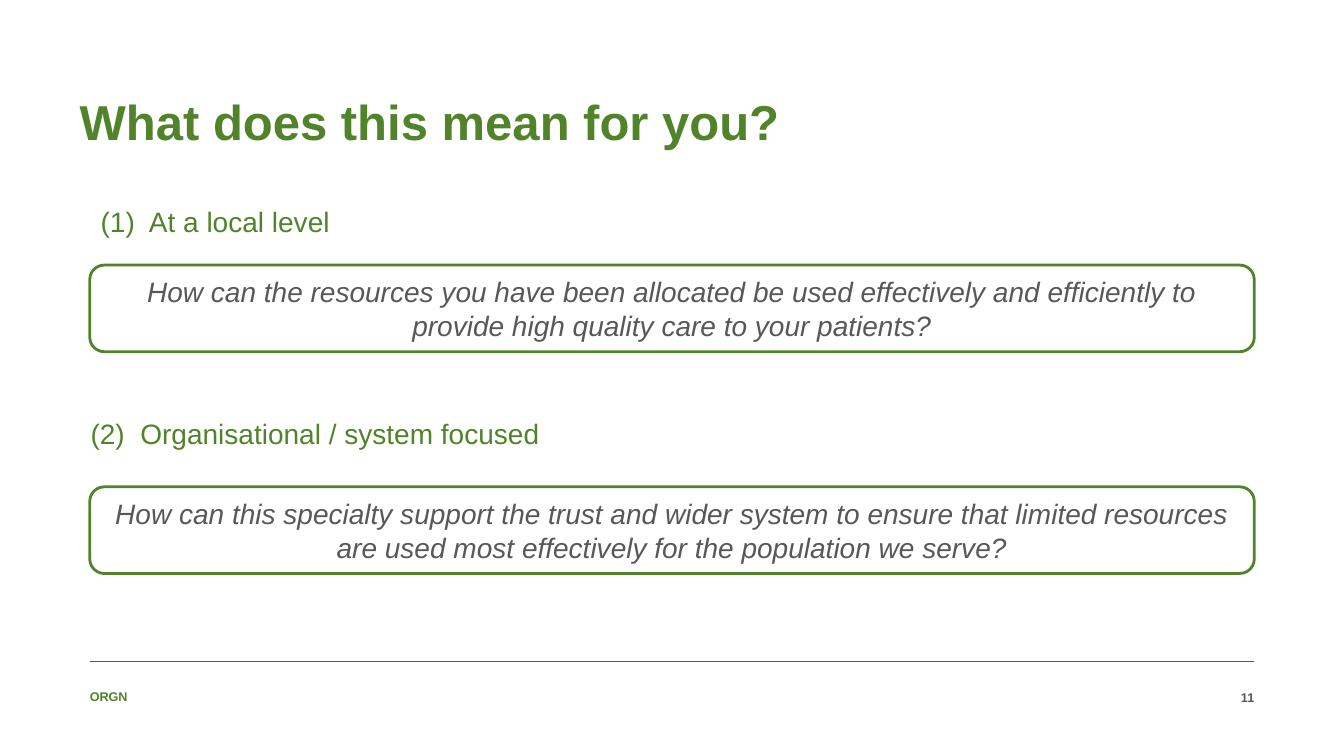
import pptx
import pptx.util
import pptx.dml.color
import pptx.enum.shapes
import pptx.enum.text
import pptx.oxml

RGBColor = pptx.dml.color.RGBColor
GREEN = RGBColor(0x51, 0x83, 0x2B)
GREY = RGBColor(0x59, 0x58, 0x57)
WHITE = RGBColor(0xFF, 0xFF, 0xFF)
ALIGN = pptx.enum.text.PP_ALIGN
ANCHOR = pptx.enum.text.MSO_ANCHOR
SHAPE = pptx.enum.shapes.MSO_SHAPE

LEFT, RIGHT = 89, 1244
WIDTH = RIGHT - LEFT


def px(n):
    """Convert px, at 100 to the inch, into EMU."""
    return pptx.util.Emu(n * 9144)


class SlideBuilder:
    font = "Arial"

    def __init__(self, prs):
        self.s = prs.slides.add_slide(prs.slide_layouts[5])

    def set_text(self, sp, text, size, color, bold=False, italic=False,
                 align=ALIGN.LEFT, anchor=ANCHOR.MIDDLE, inset=0, leading=None):
        tf = sp.text_frame
        tf.text = text
        tf.word_wrap = True
        tf.auto_size = pptx.enum.text.MSO_AUTO_SIZE.NONE
        tf.vertical_anchor = anchor
        tf.margin_left = tf.margin_right = px(inset)
        tf.margin_top = tf.margin_bottom = px(inset // 2)
        p = tf.paragraphs[0]
        p.alignment = align
        if leading:
            p.line_spacing = pptx.util.Pt(leading)
        f = p.runs[0].font
        f.name, f.size, f.color.rgb = self.font, pptx.util.Pt(size), color
        f.bold, f.italic = bold, italic

    def title(self, x, y, w, h, text):
        sp = self.s.shapes.title
        sp.left, sp.top, sp.width, sp.height = map(px, (x, y, w, h))
        self.set_text(sp, text, 35, GREEN, bold=True, anchor=ANCHOR.BOTTOM)

    def text(self, x, y, w, h, text, size, color, **style):
        sp = self.s.shapes.add_textbox(*map(px, (x, y, w, h)))
        self.set_text(sp, text, size, color, **style)

    def question(self, x, y, w, h, text):
        sp = self.s.shapes.add_shape(SHAPE.ROUNDED_RECTANGLE, *map(px, (x, y, w, h)))
        sp.shadow.inherit = False
        sp.fill.solid()
        sp.fill.fore_color.rgb = WHITE
        sp.line.color.rgb = GREEN
        sp.line.width = pptx.util.Pt(2)
        self.set_text(sp, text, 20, GREY, italic=True, align=ALIGN.CENTER,
                      inset=10, leading=24)

    def rule(self, x1, x2, y):
        line = self.s.shapes.add_connector(
            pptx.enum.shapes.MSO_CONNECTOR.STRAIGHT, px(x1), px(y), px(x2), px(y))
        line.line.color.rgb = GREY
        line.line.width = pptx.util.Pt(0.25)
        line._element.spPr.append(pptx.oxml.parse_xml(
            '<a:effectLst xmlns:a="http://schemas.openxmlformats.org/drawingml/2006/main"/>'))


def main():
    prs = pptx.Presentation()
    prs.slide_width, prs.slide_height = px(1333), px(750)
    b = SlideBuilder(prs)

    b.rule(LEFT, RIGHT, 656)
    b.text(LEFT, 675, 315, 31, "ORGN", 9, GREEN, bold=True)
    b.title(79, 90, WIDTH, 59, "What does this mean for you?")
    b.text(1192, 684, 52, 15, "11", 9, GREY, bold=True, align=ALIGN.RIGHT)

    levels = [
        (90, 198, "(1)  At a local level", 263,
         "How can the resources you have been allocated be used effectively and "
         "efficiently to provide high quality care to your patients?"),
        (80, 408, "(2)  Organisational / system focused", 483,
         "How can this specialty support the trust and wider system to ensure that "
         "limited resources are used most effectively for the population we serve?"),
    ]
    for x, label_y, label, question_y, question in levels:
        b.text(x, label_y, 667, 44, label, 20, GREEN,
               anchor=ANCHOR.TOP, inset=10, leading=24)
        b.question(LEFT, question_y, WIDTH, 86, question)

    prs.save("out.pptx")


if __name__ == "__main__":
    main()
